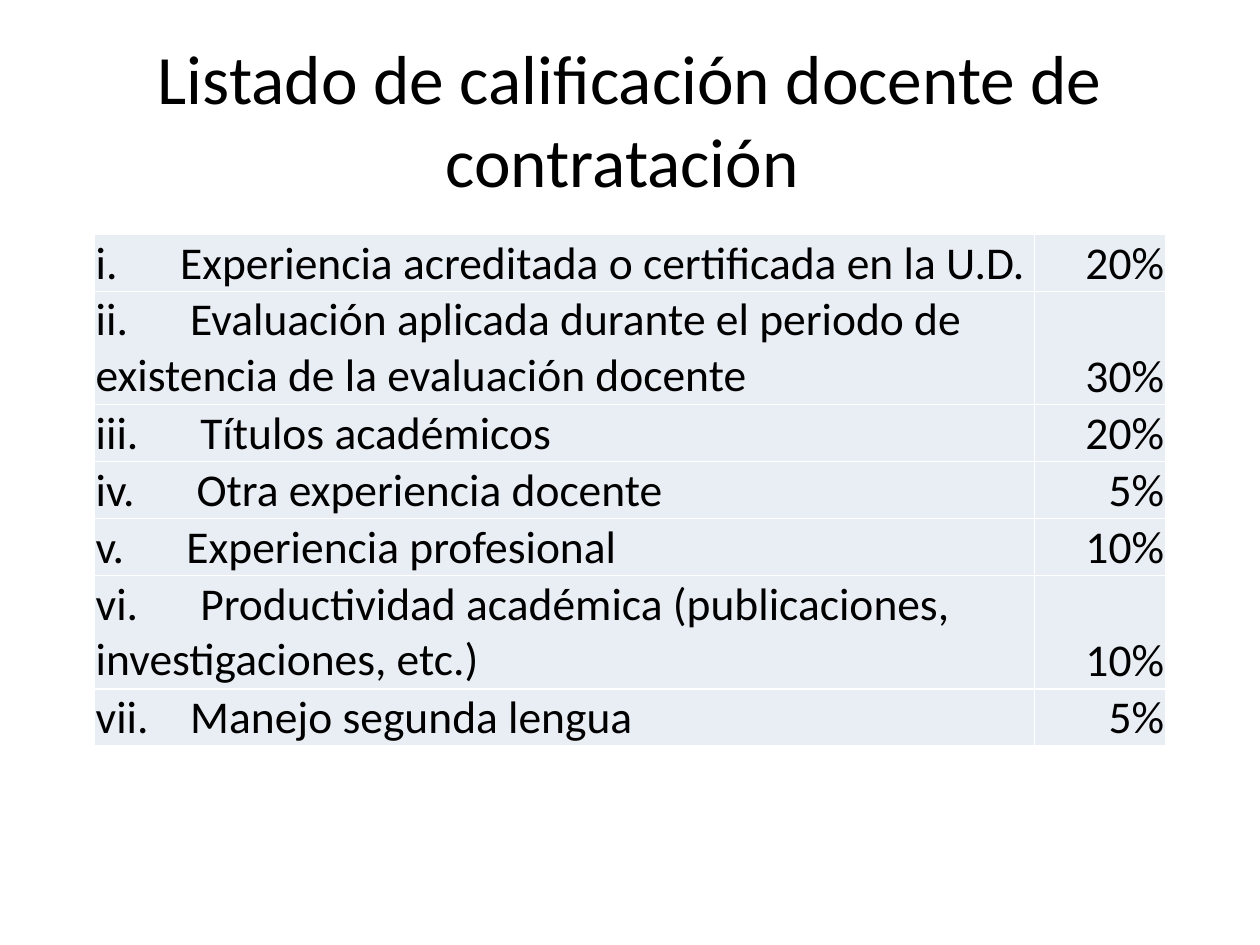
from lxml.etree import SubElement
from pptx import Presentation
from pptx.dml.color import RGBColor
from pptx.enum.text import MSO_ANCHOR, MSO_AUTO_SIZE, PP_ALIGN
from pptx.oxml import parse_xml
from pptx.oxml.ns import nsdecls, qn
from pptx.util import Inches, Pt

COLORS = {"text": "000000", "cell": "E9EDF4", "border": "FFFFFF"}

CRITERIA = [
    ("i.", "Experiencia acreditada o certificada en la U.D.", "20%", 0.67, 1),
    ("ii.", "Evaluación aplicada durante el periodo de existencia de la evaluación docente", "30%", 0.75, 2),
    ("iii.", "Títulos académicos", "20%", 0.83, 1),
    ("iv.", "Otra experiencia docente", "5%", 0.8, 1),
    ("v.", "Experiencia profesional", "10%", 0.72, 1),
    ("vi.", "Productividad académica (publicaciones, investigaciones, etc.)", "10%", 0.83, 2),
    ("vii.", "Manejo segunda lengua", "5%", 0.75, 1),
]


def write(tf, text, size, align=PP_ALIGN.LEFT, tab=None, font="Calibri", color="text"):
    p = tf.paragraphs[0]
    p.alignment = align
    if tab:
        tabs = SubElement(p._p.get_or_add_pPr(), qn("a:tabLst"))
        SubElement(tabs, qn("a:tab"), pos=str(Inches(tab)), algn="l")
    r = p.add_run()
    r.text = text
    r.font.name = font
    r.font.size = Pt(size)
    r.font.color.rgb = RGBColor.from_string(COLORS[color])


class Deck:
    def __init__(self, width, height):
        self.prs = Presentation()
        self.prs.slide_width, self.prs.slide_height = Inches(width), Inches(height)
        self.s = self.prs.slides.add_slide(self.prs.slide_layouts[5])

    def box(self, x, y, w, h):
        sw, sh = self.prs.slide_width, self.prs.slide_height
        return int(x * sw), int(y * sh), int(w * sw), int(h * sh)

    def title(self, text, *share):
        sp = self.s.shapes.title
        sp.left, sp.top, sp.width, sp.height = self.box(*share)
        tf = sp.text_frame
        tf.word_wrap = True
        tf.auto_size = MSO_AUTO_SIZE.NONE
        tf.vertical_anchor = MSO_ANCHOR.MIDDLE
        write(tf, text, 39.6, PP_ALIGN.CENTER)

    def cell(self, cell, text, anchor, **style):
        cell.margin_left = cell.margin_right = cell.margin_top = Inches(0.01)
        cell.margin_bottom = 0
        cell.vertical_anchor = anchor
        cell.fill.solid()
        cell.fill.fore_color.rgb = RGBColor.from_string(COLORS["cell"])
        tcPr = cell._tc.get_or_add_tcPr()
        for i, side in enumerate("LRTB"):
            tcPr.insert(i, parse_xml(
                f'<a:ln{side} {nsdecls("a")} w="{Pt(1)}"><a:solidFill>'
                f'<a:srgbClr val="{COLORS["border"]}"/></a:solidFill></a:ln{side}>'))
        write(cell.text_frame, text, 26, **style)

    def table(self, criteria, widths, line_height, *share):
        frame = self.s.shapes.add_table(len(criteria), len(widths), *self.box(*share))
        tbl = frame.table
        tbl.first_row = tbl.horz_banding = False
        for col, width in zip(tbl.columns, widths):
            col.width = int(width * self.prs.slide_width)
        for i, (numeral, name, weight, tab, lines) in enumerate(criteria):
            tbl.rows[i].height = int(lines * line_height * self.prs.slide_height)
            self.cell(tbl.cell(i, 0), f"{numeral}\t{name}", MSO_ANCHOR.TOP, tab=tab)
            self.cell(tbl.cell(i, 1), weight, MSO_ANCHOR.BOTTOM, align=PP_ALIGN.RIGHT)


def main():
    deck = Deck(10, 7.5)
    deck.title("Listado de calificación docente de contratación ", 0.05, 0.04, 0.9, 0.17)
    deck.table(CRITERIA, (0.746, 0.104), 0.06, 0.075, 0.248, 0.85, 0.54)
    deck.prs.save("out.pptx")


if __name__ == "__main__":
    main()
